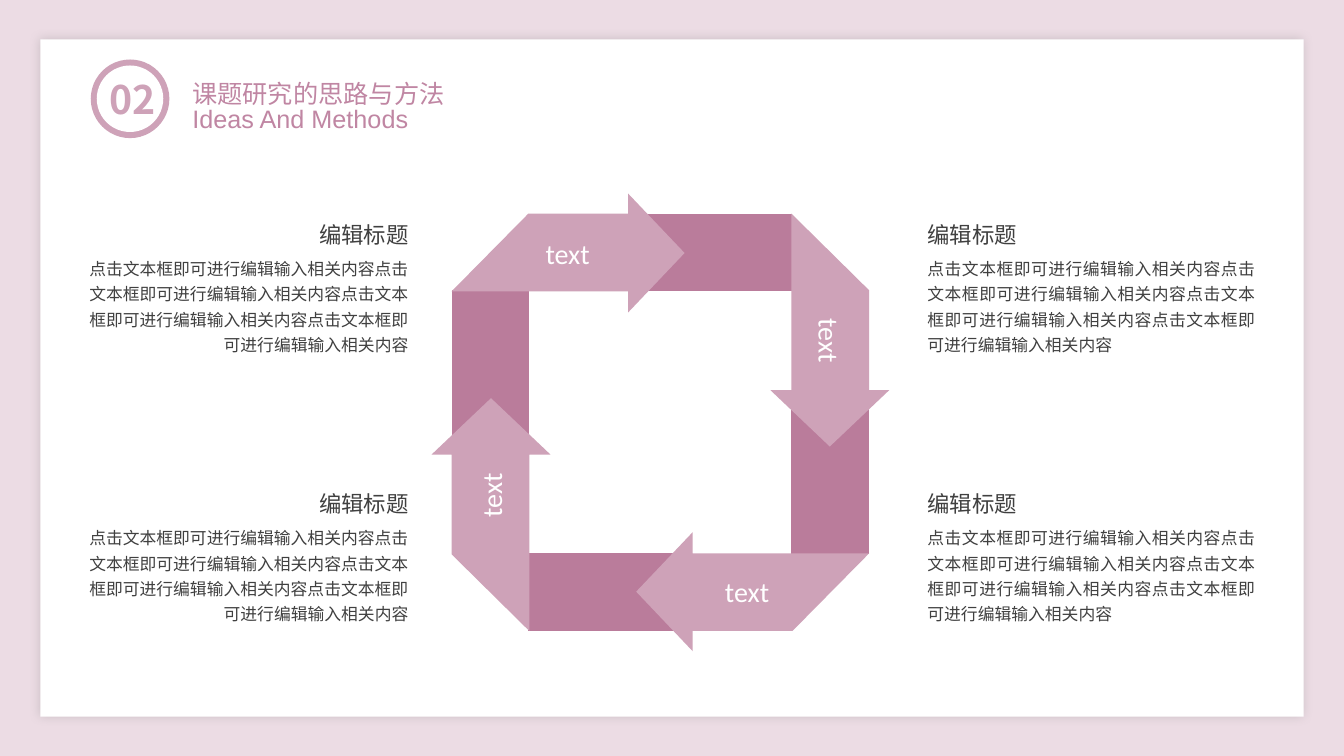
from lxml import etree
from pptx import Presentation
from pptx.dml.color import RGBColor
from pptx.enum.shapes import MSO_SHAPE as SHAPE
from pptx.enum.text import MSO_ANCHOR as ANCHOR, MSO_AUTO_SIZE as FIT, PP_ALIGN as ALIGN
from pptx.oxml import parse_xml
from pptx.oxml.ns import nsdecls, qn
from pptx.util import Pt

PX = 9144  # EMU per px, 100 px to the inch
SLIDE_W, SLIDE_H = 1333, 750

PALE = RGBColor(0xEC, 0xDC, 0xE4)
WHITE = RGBColor(0xFF, 0xFF, 0xFF)
PINK = RGBColor(0xCE, 0xA2, 0xB8)
MAUVE = RGBColor(0xBA, 0x7C, 0x9B)
ROSE = RGBColor(0xC0, 0x86, 0xA3)
GREY = RGBColor(0x40, 0x40, 0x40)

CJK, ARIAL, CALIBRI = "Noto Sans CJK SC", "Arial", "Calibri"
HEADING = "编辑标题"
BODY = "点击文本框即可进行编辑输入相关内容" * 4

# Ring parts on its top side, relative to the ring's centre
BAR = [(-24, -207), (131, -207), (131, -130), (-24, -130)]
ARROW = [(-32, -227), (24, -168), (-32, -109), (-32, -130),
         (-207, -130), (-131, -207), (-32, -207)]
LABEL_Y = -168
LABELS = [(-92, 0), (-81, 90), (-86, 0), (-72, 270)]  # offset along side, rotation


def paint(sp, color):
    sp.shadow.inherit = False
    sp.fill.solid()
    sp.fill.fore_color.rgb = color
    sp.line.fill.background()
    return sp


def add_shape(shapes, kind, x, y, w, h, color):
    return paint(shapes.add_shape(kind, x * PX, y * PX, w * PX, h * PX), color)


def add_text(slide, text, x, y, w, h, size, font, color, align=ALIGN.LEFT,
             bold=False, spacing=None, wrap=True, anchor=ANCHOR.TOP):
    sp = slide.shapes.add_textbox(x * PX, y * PX, w * PX, h * PX)
    tf = sp.text_frame
    tf.word_wrap, tf.auto_size, tf.vertical_anchor = wrap, FIT.SHAPE_TO_FIT_TEXT, anchor
    p = tf.paragraphs[0]
    p.alignment = align
    if spacing:
        p.line_spacing = spacing
    r = p.add_run()
    r.text = text
    r.font.size, r.font.name, r.font.bold = Pt(size), font, bold
    r.font.color.rgb = color
    etree.SubElement(r.font._element, qn("a:ea")).set("typeface", font)
    return sp


def add_card(slide, x, y, w, h):
    card = add_shape(slide.shapes, SHAPE.RECTANGLE, x, y, w, h, WHITE)
    effects = card._element.spPr.find(qn("a:effectLst"))
    effects.append(parse_xml(
        f'<a:outerShdw {nsdecls("a")} blurRad="{Pt(8)}" dist="0" dir="0" '
        'algn="ctr" rotWithShape="0"><a:srgbClr val="808080">'
        '<a:alpha val="32000"/></a:srgbClr></a:outerShdw>'))


def add_header(slide, x, y):
    # Numbered badge
    badge = slide.shapes.add_group_shape().shapes
    add_shape(badge, SHAPE.OVAL, x, y, 78, 78, PINK)
    add_shape(badge, SHAPE.OVAL, x + 6, y + 6, 66, 66, WHITE)
    add_text(slide, "02", x + 5, y + 11, 72, 57, 28, CJK, PINK, ALIGN.CENTER, bold=True)
    # Titles
    add_text(slide, "课题研究的思路与方法", x + 91, y - 16, 273, 62, 18, CJK, ROSE,
             spacing=2.0, wrap=False)
    add_text(slide, "Ideas And Methods", x + 91, y + 39, 549, 40, 18, ARIAL, ROSE)


def turn(point, quarters):
    x, y = point
    for _ in range(quarters):
        x, y = -y, x
    return x, y


def add_ring(slide, cx, cy):
    # Four bars, then four arrows over them, each a quarter turn on
    for outline, color in ((BAR, MAUVE), (ARROW, PINK)):
        for side in range(4):
            points = [(cx + x, cy + y) for x, y in (turn(pt, side) for pt in outline)]
            builder = slide.shapes.build_freeform(*points[0], scale=PX)
            builder.add_line_segments(points[1:], close=True)
            paint(builder.convert_to_shape(), color)
    # Arrow labels
    w, h = 158, 44
    for side, (along, rotation) in enumerate(LABELS):
        x, y = turn((along, LABEL_Y), side)
        label = add_text(slide, "text", cx + x - w // 2, cy + y - h // 2, w, h, 20,
                         CALIBRI, WHITE, ALIGN.CENTER, anchor=ANCHOR.MIDDLE)
        label.rotation = rotation


def add_note(slide, x, y, w, on_left):
    head_w = 149
    head_x = x + w - head_w if on_left else x
    head_align, body_align = (ALIGN.RIGHT, ALIGN.RIGHT) if on_left else (ALIGN.LEFT, ALIGN.JUSTIFY)
    add_text(slide, HEADING, head_x, y, head_w, 37, 16, CJK, GREY, head_align)
    add_text(slide, BODY, x, y + 33, w, 111, 12, CJK, GREY, body_align, spacing=1.25)


def main():
    prs = Presentation()
    prs.slide_width, prs.slide_height = SLIDE_W * PX, SLIDE_H * PX
    slide = prs.slides.add_slide(prs.slide_layouts[6])
    slide.background.fill.solid()
    slide.background.fill.fore_color.rgb = PALE

    add_card(slide, 40, 39, 1253, 672)
    add_header(slide, 90, 59)
    add_ring(slide, 655, 419)
    for x, on_left in ((70, True), (910, False)):
        for y in (214, 481):
            add_note(slide, x, y, 345, on_left)

    prs.save("out.pptx")


if __name__ == "__main__":
    main()
